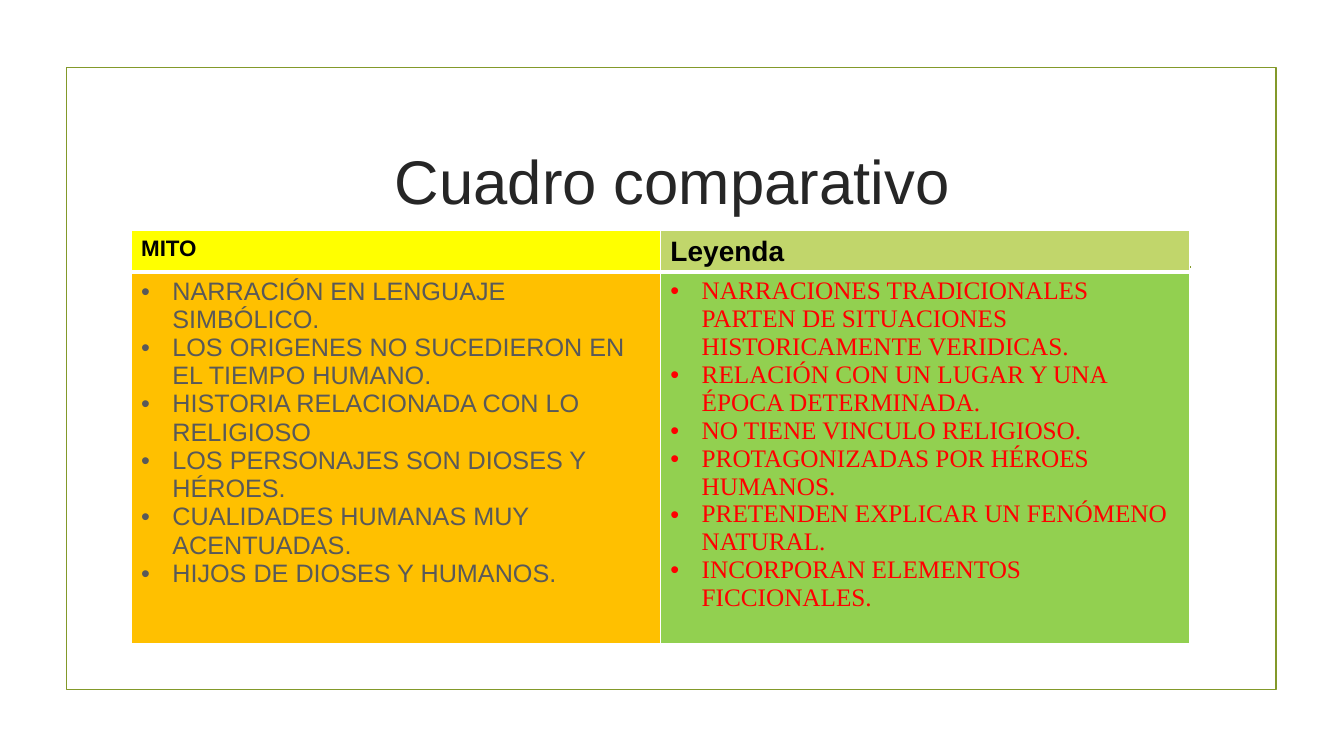
from pptx import Presentation
from pptx.dml.color import RGBColor
from pptx.enum.shapes import MSO_CONNECTOR as Connector, MSO_SHAPE as Shape
from pptx.enum.text import MSO_ANCHOR as Anchor, PP_ALIGN as Align
from pptx.oxml.ns import qn
from pptx.util import Inches, Pt
from lxml.etree import SubElement

TITLE = "Cuadro comparativo"
COLUMNS = [
    {
        "heading": "MITO", "heading_size": 16, "heading_fill": "yellow",
        "body_fill": "orange", "body_color": "gray", "body_font": "Arial",
        "points": [
            "NARRACIÓN EN LENGUAJE SIMBÓLICO.",
            "LOS ORIGENES NO SUCEDIERON EN EL TIEMPO HUMANO.",
            "HISTORIA RELACIONADA CON LO RELIGIOSO",
            "LOS PERSONAJES SON DIOSES Y HÉROES.",
            "CUALIDADES HUMANAS MUY ACENTUADAS.",
            "HIJOS DE DIOSES Y HUMANOS.",
        ],
    },
    {
        "heading": "Leyenda", "heading_size": 20, "heading_fill": "lime",
        "body_fill": "green", "body_color": "red", "body_font": "Times New Roman",
        "points": [
            "NARRACIONES TRADICIONALES PARTEN DE SITUACIONES HISTORICAMENTE VERIDICAS.",
            "RELACIÓN CON UN LUGAR Y UNA ÉPOCA DETERMINADA.",
            "NO TIENE VINCULO RELIGIOSO.",
            "PROTAGONIZADAS POR HÉROES HUMANOS.",
            "PRETENDEN EXPLICAR UN FENÓMENO NATURAL.",
            "INCORPORAN ELEMENTOS FICCIONALES.",
        ],
    },
]
COLORS = {
    "olive": "83992A", "ink": "262626", "black": "000000", "white": "FFFFFF",
    "yellow": "FFFF00", "lime": "C1D66B", "orange": "FFC000", "green": "92D050",
    "gray": "595959", "red": "FF0000",
}
FRAME = (0.66, 0.67, 12, 6.17)
TITLE_BOX = (1.42, 1.07, 10.5, 1.43)
RULE = (1.53, 2.65, 11.81, 2.65)
TABLE_LEFT, TABLE_TOP, TABLE_WIDTH = 1.3, 2.29, 10.5
ROW_HEIGHTS = (0.41, 3.68)
INDENT = Inches(0.31)
HEADING_BORDERS = {"lnL": 1, "lnR": 1, "lnT": 1, "lnB": 3}
BODY_BORDERS = {"lnL": 1, "lnR": 1, "lnT": 3, "lnB": 1}


def color(name):
    return RGBColor.from_string(COLORS[name])


def inches(values):
    return [Inches(value) for value in values]


def format_font(font, hue, **values):
    for name, value in values.items():
        setattr(font, name, value)
    font.color.rgb = color(hue)


def format_line(line):
    line.color.rgb = color("olive")
    line.width = Pt(1.25)


def format_cell(cell, fill, borders):
    properties = cell._tc.get_or_add_tcPr()
    for side, width in borders.items():
        border = SubElement(properties, qn(f"a:{side}"), w=str(Pt(width)))
        solid = SubElement(border, qn("a:solidFill"))
        SubElement(solid, qn("a:srgbClr"), val=COLORS["white"])
    cell.fill.solid()
    cell.fill.fore_color.rgb = color(fill)


def add_bullet(para):
    properties = para._p.get_or_add_pPr()
    properties.set("marL", str(INDENT))
    properties.set("indent", str(-INDENT))
    SubElement(properties, qn("a:buFont"), typeface="Arial")
    SubElement(properties, qn("a:buChar"), char="•")


def add_frame(page):
    frame = page.shapes.add_shape(Shape.RECTANGLE, *inches(FRAME))
    frame.shadow.inherit = False
    frame.fill.background()
    format_line(frame.line)
    rule = page.shapes.add_connector(Connector.STRAIGHT, *inches(RULE))
    format_line(rule.line)
    SubElement(rule._element.spPr, qn("a:effectLst"))


def add_title(page):
    title = page.shapes.title
    title.left, title.top, title.width, title.height = inches(TITLE_BOX)
    title.text_frame.text = TITLE
    title.text_frame.vertical_anchor = Anchor.MIDDLE
    para = title.text_frame.paragraphs[0]
    para.alignment = Align.CENTER
    format_font(para.runs[0].font, "ink", name="Arial", size=Pt(44))


def add_comparison(page):
    box = inches((TABLE_LEFT, TABLE_TOP, TABLE_WIDTH, sum(ROW_HEIGHTS)))
    table = page.shapes.add_table(len(ROW_HEIGHTS), len(COLUMNS), *box).table
    for row, height in zip(table.rows, ROW_HEIGHTS):
        row.height = Inches(height)
    for index, column in enumerate(COLUMNS):
        table.columns[index].width = Inches(TABLE_WIDTH / len(COLUMNS))
        heading, body = table.cell(0, index), table.cell(1, index)
        format_cell(heading, column["heading_fill"], HEADING_BORDERS)
        format_cell(body, column["body_fill"], BODY_BORDERS)
        heading.text = column["heading"]
        format_font(heading.text_frame.paragraphs[0].runs[0].font, "black",
                    name="Arial", size=Pt(column["heading_size"]), bold=True)
        body.text = "\n".join(column["points"])
        for para in body.text_frame.paragraphs:
            add_bullet(para)
            format_font(para.runs[0].font, column["body_color"],
                        name=column["body_font"], size=Pt(18), bold=False)


def main():
    deck = Presentation()
    deck.slide_width, deck.slide_height = inches((13.33, 7.5))
    page = deck.slides.add_slide(deck.slide_layouts[5])
    add_frame(page)
    add_title(page)
    add_comparison(page)
    deck.save("out.pptx")


if __name__ == "__main__":
    main()
